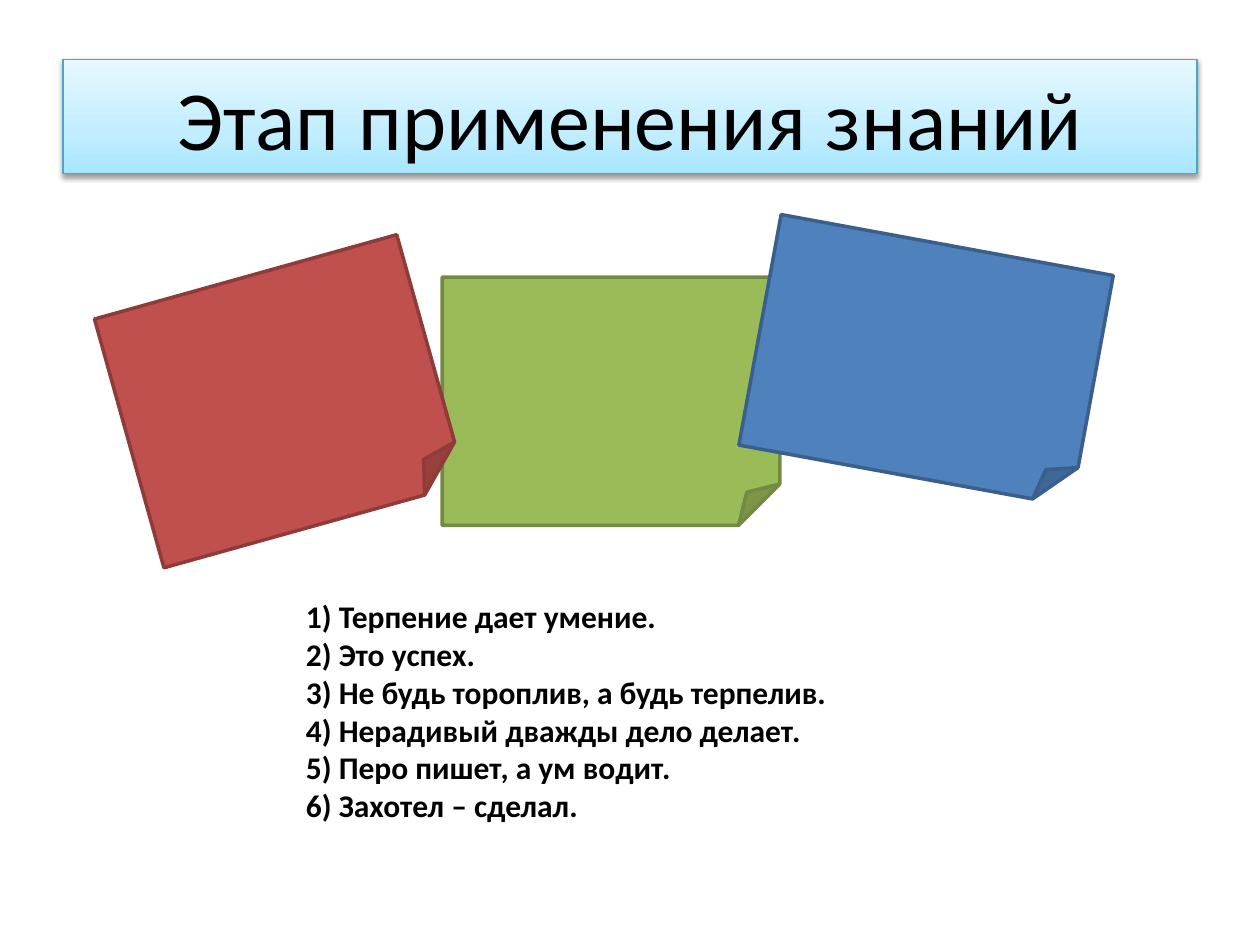
import copy
import pptx
import pptx.util
import pptx.dml.color
import pptx.enum.shapes
import pptx.enum.text
import pptx.oxml
import pptx.oxml.ns

THEME = {
    "font": "Calibri", "title_size": 48, "proverb_size": 18, "text": "000000",
    "banner_line": "46AAC5",
    "banner_stops": [(0, "A7E6FF"), (0.35, "C1EDFF"), (1, "E7F8FF")],
    "green": ("9BBB59", "738A42"),
    "red": ("C0504D", "8E3B39"),
    "blue": ("4F81BD", "3A5F8C"),
}
SHAPES = pptx.enum.shapes.MSO_SHAPE
rgb = pptx.dml.color.RGBColor.from_string

deck = pptx.Presentation()
deck.slide_width = pptx.util.Inches(10)
deck.slide_height = pptx.util.Inches(7.5)
slide = deck.slides.add_slide(deck.slide_layouts[6])


def share(left, top, width, height):
    """Turn percentages of the slide's width and height into lengths."""
    sides = (deck.slide_width, deck.slide_height) * 2
    return [int(side * part / 100) for side, part in zip(sides, (left, top, width, height))]


def style_text(paragraph, size, bold=False):
    paragraph.font.name = THEME["font"]
    paragraph.font.size = pptx.util.Pt(size)
    paragraph.font.bold = bold
    paragraph.font.color.rgb = rgb(THEME["text"])


# Title banner with gradient and soft shadow
banner = slide.shapes.add_shape(SHAPES.RECTANGLE, *share(5, 6.27, 90, 12.13))
banner.line.color.rgb = rgb(THEME["banner_line"])
banner.line.width = pptx.util.Pt(0.75)
banner.fill.gradient()
banner.fill.gradient_angle = 90
stop_list = banner._element.spPr.find(".//" + pptx.oxml.ns.qn("a:gsLst"))
stop_list.insert(1, copy.deepcopy(stop_list[0]))
for stop, (position, color) in zip(banner.fill.gradient_stops, THEME["banner_stops"]):
    stop.position = position
    stop.color.rgb = rgb(color)
banner._element.spPr.append(pptx.oxml.parse_xml(
    f'<a:effectLst {pptx.oxml.ns.nsdecls("a")}>'
    f'<a:outerShdw blurRad="{pptx.util.Pt(3.1)}" dist="{pptx.util.Pt(1.6)}" dir="5400000" rotWithShape="0">'
    '<a:srgbClr val="000000"><a:alpha val="38000"/></a:srgbClr>'
    '</a:outerShdw></a:effectLst>'))
banner.text_frame.vertical_anchor = pptx.enum.text.MSO_ANCHOR.MIDDLE
title = banner.text_frame.paragraphs[0]
title.text = "Этап применения знаний"
title.alignment = pptx.enum.text.PP_ALIGN.CENTER
style_text(title, THEME["title_size"])

# Coloured note sheets, back to front
for color, place, tilt in [
    ("green", (35.1, 29.33, 26.8, 26.27), 0),
    ("red", (9.8, 28.8, 24.9, 27.33), -15.6),
    ("blue", (60.1, 25.73, 26.8, 24.8), 10.4),
]:
    note = slide.shapes.add_shape(SHAPES.FOLDED_CORNER, *share(*place))
    note.rotation = tilt
    note.shadow.inherit = False
    fill, outline = THEME[color]
    note.fill.solid()
    note.fill.fore_color.rgb = rgb(fill)
    note.line.color.rgb = rgb(outline)
    note.line.width = pptx.util.Pt(2)

# Proverbs
proverbs = [
    "Терпение дает умение.",
    "Это успех.",
    "Не будь тороплив, а будь терпелив.",
    "Нерадивый дважды дело делает.",
    "Перо пишет, а ум водит.",
    "Захотел – сделал.",
]
proverb_frame = slide.shapes.add_textbox(*share(23.3, 62.53, 50, 29.6)).text_frame
proverb_frame.word_wrap = True
for number, proverb in enumerate(proverbs, 1):
    line = proverb_frame.paragraphs[0] if number == 1 else proverb_frame.add_paragraph()
    line.text = f"{number}) {proverb}"
    style_text(line, THEME["proverb_size"], bold=True)

deck.save("out.pptx")
